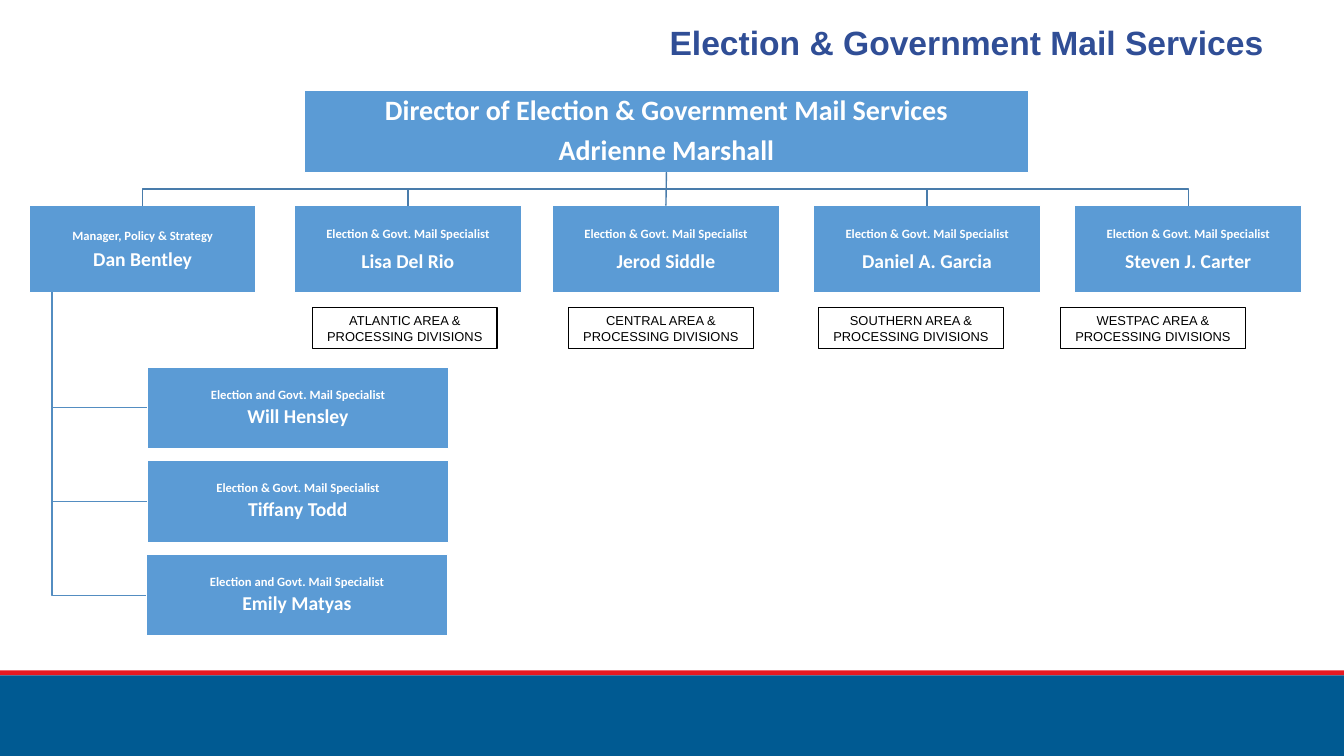
import dataclasses

import pptx
import pptx.dml.color
import pptx.enum.shapes
import pptx.enum.text
import pptx.oxml
import pptx.oxml.ns
import pptx.util

Inches = pptx.util.Inches
Pt = pptx.util.Pt
ALIGN = pptx.enum.text.PP_ALIGN
MIDDLE = pptx.enum.text.MSO_ANCHOR.MIDDLE
RECTANGLE = pptx.enum.shapes.MSO_SHAPE.RECTANGLE


@dataclasses.dataclass(frozen=True)
class Theme:
    heading_font: str = "Arial"
    chart_font: str = "Calibri"
    title: str = "304E96"
    card: str = "5B9BD5"
    white: str = "FFFFFF"
    black: str = "000000"
    red: str = "E71921"
    navy: str = "005A92"
    upper_line: str = "497CAB"
    lower_line: str = "538DC1"
    title_size: float = 24
    director_size: float = 20
    name_size: float = 14
    role_size: float = 9
    area_size: float = 9.2


def rgb(value):
    return pptx.dml.color.RGBColor.from_string(value)


class OrgChart:
    def __init__(self, page, theme):
        self.page = page
        self.theme = theme

    def rectangle(self, left, top, width, height, fill=None, line=None, weight=1):
        box = self.page.shapes.add_shape(
            RECTANGLE, Inches(left), Inches(top), Inches(width), Inches(height))
        box.shadow.inherit = False
        if fill:
            box.fill.solid()
            box.fill.fore_color.rgb = rgb(fill)
        else:
            box.fill.background()
        if line:
            box.line.color.rgb = rgb(line)
            box.line.width = Pt(weight)
        else:
            box.line.fill.background()
        return box

    def set_text(self, box, lines, sizes, font, color, bold=False,
                 align=ALIGN.CENTER, spacing=1.0, after=0):
        frame = box.text_frame
        frame.word_wrap = True
        frame.vertical_anchor = MIDDLE
        frame.text = "\n".join(lines)
        for para, size in zip(frame.paragraphs, sizes):
            para.alignment = align
            para.line_spacing = spacing
            para.space_after = Pt(after)
            for span in para.runs:
                span.font.size = Pt(size)
                span.font.name = font
                span.font.bold = bold
                span.font.color.rgb = rgb(color)

    def title(self, text):
        box = self.page.shapes.add_textbox(
            Inches(0.15), Inches(0.07), Inches(12.48), Inches(0.75))
        self.set_text(box, [text], [self.theme.title_size], self.theme.heading_font,
                      self.theme.title, bold=True, align=ALIGN.RIGHT, spacing=0.9)

    def card(self, place, lines, sizes, spacing, after):
        box = self.rectangle(*place, fill=self.theme.card, line=self.theme.white)
        frame = box.text_frame
        frame.margin_left = frame.margin_right = Inches(0.01)
        frame.margin_top = frame.margin_bottom = Inches(0.01)
        self.set_text(box, lines, sizes, self.theme.chart_font, self.theme.white,
                      bold=True, spacing=spacing, after=after)
        return box

    def person(self, place, role, name, spacing, after):
        sizes = [self.theme.role_size, self.theme.name_size]
        return self.card(place, [role, name], sizes, spacing, after)

    def area(self, left, text):
        box = self.rectangle(left, 3.05, 1.83, 0.41,
                             line=self.theme.black, weight=0.75)
        self.set_text(box, [text], [self.theme.area_size],
                      self.theme.heading_font, self.theme.black)

    def bent_line(self, points, color):
        builder = self.page.shapes.build_freeform(*points[0])
        builder.add_line_segments(points[1:], close=False)
        line = builder.convert_to_shape()
        line.shadow.inherit = False
        line.fill.background()
        line.line.color.rgb = rgb(color)
        line.line.width = Pt(1)

    def straight_line(self, upper, lower, color):
        line = self.page.shapes.add_connector(
            pptx.enum.shapes.MSO_CONNECTOR.STRAIGHT, 0, 0, 0, 0)
        line.begin_connect(upper, 2)
        line.end_connect(lower, 0)
        line.line.color.rgb = rgb(color)
        line.line.width = Pt(1)
        properties = line._element.spPr
        properties.append(pptx.oxml.parse_xml(
            f"<a:effectLst {pptx.oxml.ns.nsdecls('a')}/>"))

    def branch_down(self, upper, lower):
        start_x = upper.left + upper.width // 2
        start_y = upper.top + upper.height
        end_x = lower.left + lower.width // 2
        middle_y = (start_y + lower.top) // 2
        self.bent_line([(start_x, start_y), (start_x, middle_y),
                        (end_x, middle_y), (end_x, lower.top)],
                       self.theme.upper_line)

    def branch_right(self, upper, lower):
        trunk_x = upper.left + upper.width // 10
        end_y = lower.top + lower.height // 2
        self.bent_line([(trunk_x, upper.top + upper.height), (trunk_x, end_y),
                        (lower.left, end_y)], self.theme.lower_line)


def main():
    deck = pptx.Presentation()
    deck.slide_width = Inches(13.33)
    deck.slide_height = Inches(7.5)
    theme = Theme()
    chart = OrgChart(deck.slides.add_slide(deck.slide_layouts[6]), theme)

    chart.rectangle(0, 6.65, 13.33, 0.05, fill=theme.red)
    chart.rectangle(0, 6.7, 13.33, 0.8, fill=theme.navy)
    chart.title("Election & Government Mail Services")

    director = chart.card(
        (3.02, 0.9, 7.18, 0.81),
        ["Director of Election & Government Mail Services", "Adrienne Marshall"],
        [theme.director_size] * 2, spacing=0.9, after=7)
    manager = chart.person((0.29, 2.04, 2.25, 0.86),
                           "Manager, Policy & Strategy", "Dan Bentley", 1.0, 3.15)
    chart.branch_down(director, manager)

    specialists = [
        (2.92, "Lisa Del Rio", 3.1, "ATLANTIC"),
        (5.48, "Jerod Siddle", 5.64, "CENTRAL"),
        (8.07, "Daniel A. Garcia", 8.12, "SOUTHERN"),
        (10.66, "Steven J. Carter", 10.52, "WESTPAC"),
    ]
    for left, name, area_left, area in specialists:
        specialist = chart.person((left, 2.04, 2.25, 0.86),
                                  "Election & Govt. Mail Specialist", name, 1.0, 6)
        if name == "Jerod Siddle":
            chart.straight_line(director, specialist, theme.upper_line)
        else:
            chart.branch_down(director, specialist)
        chart.area(area_left, f"{area} AREA & PROCESSING DIVISIONS")

    staff = [
        (1.46, "Election and Govt. Mail Specialist", "Will Hensley"),
        (1.46, "Election & Govt. Mail Specialist", "Tiffany Todd"),
        (1.45, "Election and Govt. Mail Specialist", "Emily Matyas"),
    ]
    for row, (left, role, name) in enumerate(staff):
        member = chart.person((left, 3.64 + 0.93 * row, 2.99, 0.81),
                              role, name, 0.9, 3.15)
        chart.branch_right(manager, member)

    deck.save("out.pptx")


if __name__ == "__main__":
    main()
